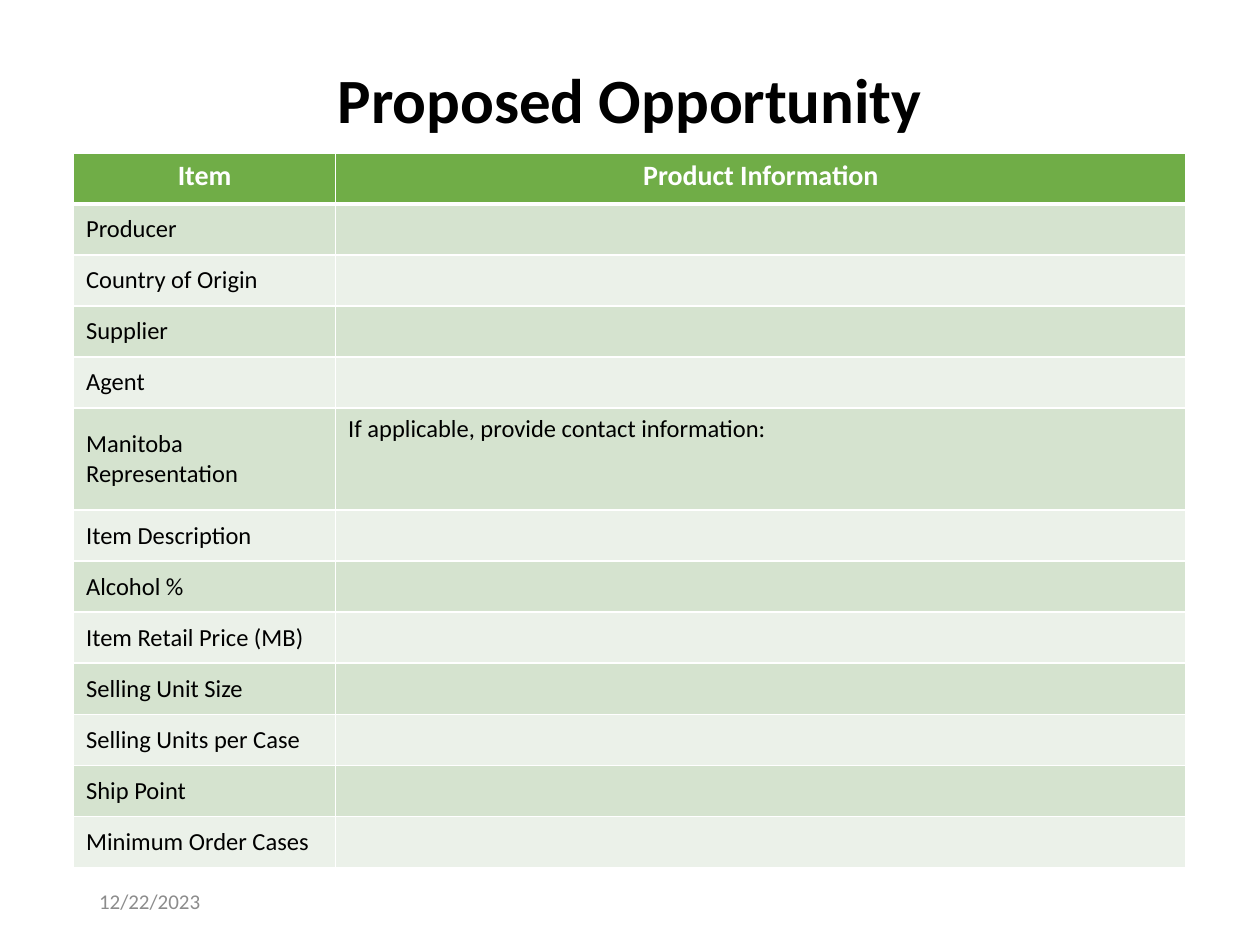
import pptx
import pptx.dml.color
import pptx.enum.text
import pptx.oxml
import pptx.oxml.ns
import pptx.util

Pt = pptx.util.Pt
RGBColor = pptx.dml.color.RGBColor
ALIGN = pptx.enum.text.PP_ALIGN
ANCHOR = pptx.enum.text.MSO_ANCHOR

FONT = "Calibri"
BLACK = RGBColor(0x00, 0x00, 0x00)
WHITE = RGBColor(0xFF, 0xFF, 0xFF)
GRAY = RGBColor(0x8C, 0x8C, 0x8C)
GREEN = RGBColor(0x70, 0xAD, 0x47)
BANDS = (RGBColor(0xD5, 0xE3, 0xCF), RGBColor(0xEB, 0xF1, 0xE9))

ROW_HEIGHT = 29.17
HEADINGS = ("Item", "Product Information")
REPRESENTATION = "Manitoba Representation"
CONTACT_HINT = "If applicable, provide contact information:"
ITEMS = (
    "Producer", "Country of Origin", "Supplier", "Agent", REPRESENTATION,
    "Item Description", "Alcohol %", "Item Retail Price (MB)",
    "Selling Unit Size", "Selling Units per Case", "Ship Point",
    "Minimum Order Cases",
)


class SlideBuilder:
    """Holds the slide and draws each kind of element in one style."""

    def __init__(self, slide):
        self.slide = slide

    def add_text(self, frame, text, size, color, bold=False, align=ALIGN.LEFT):
        paragraph = frame.paragraphs[0]
        paragraph.alignment = align
        run = paragraph.add_run()
        run.text = text
        run.font.name = FONT
        run.font.size = Pt(size)
        run.font.bold = bold
        run.font.color.rgb = color
        return paragraph

    def title(self, text, left, top, width, height):
        heading = self.slide.shapes.title
        heading.left, heading.top = Pt(left), Pt(top)
        heading.width, heading.height = Pt(width), Pt(height)
        heading.text_frame.vertical_anchor = ANCHOR.MIDDLE
        paragraph = self.add_text(heading.text_frame, text, 36, BLACK, True, ALIGN.CENTER)
        paragraph.line_spacing = 0.9

    def label(self, text, left, top, width, height):
        box = self.slide.shapes.add_textbox(Pt(left), Pt(top), Pt(width), Pt(height))
        box.text_frame.word_wrap = True
        box.text_frame.vertical_anchor = ANCHOR.MIDDLE
        self.add_text(box.text_frame, text, 12, GRAY)

    def table(self, left, top, widths, heights):
        frame = self.slide.shapes.add_table(
            len(heights), len(widths), Pt(left), Pt(top),
            Pt(sum(widths)), Pt(sum(heights)))
        grid = frame.table
        for column, width in zip(grid.columns, widths):
            column.width = Pt(width)
        for row, height in zip(grid.rows, heights):
            row.height = Pt(height)
        return grid

    def cell(self, cell, fill, top_border=1, bottom_border=1):
        properties = cell._tc.get_or_add_tcPr()
        borders = {"lnL": 1, "lnR": 1, "lnT": top_border, "lnB": bottom_border}
        for side, weight in borders.items():
            properties.append(pptx.oxml.parse_xml(
                f'<a:{side} {pptx.oxml.ns.nsdecls("a")} w="{Pt(weight)}">'
                f'<a:solidFill><a:srgbClr val="{WHITE}"/></a:solidFill></a:{side}>'))
        cell.fill.solid()
        cell.fill.fore_color.rgb = fill


def main():
    deck = pptx.Presentation()
    deck.slide_width, deck.slide_height = Pt(720), Pt(540)
    builder = SlideBuilder(deck.slides.add_slide(deck.slide_layouts[5]))

    # Title and date
    builder.title("Proposed Opportunity", 49.5, 28.8, 621, 60.5)
    builder.label("12/22/2023", 49.5, 500.5, 162, 28.8)

    # Product table: the representation row is twice as high
    heights = [ROW_HEIGHT] + [
        ROW_HEIGHT * (2 if item == REPRESENTATION else 1) for item in ITEMS]
    products = builder.table(42, 87.3, (149.8, 486), heights)

    # Header row
    for column, heading in enumerate(HEADINGS):
        cell = products.cell(0, column)
        builder.cell(cell, GREEN, bottom_border=3)
        builder.add_text(cell.text_frame, heading, 16, WHITE, True, ALIGN.CENTER)

    # Item rows
    for row, item in enumerate(ITEMS, start=1):
        name, information = products.cell(row, 0), products.cell(row, 1)
        for cell in (name, information):
            builder.cell(cell, BANDS[(row - 1) % 2], top_border=3 if row == 1 else 1)
        name.vertical_anchor = ANCHOR.MIDDLE
        builder.add_text(name.text_frame, item, 14, BLACK)
        if item == REPRESENTATION:
            builder.add_text(information.text_frame, CONTACT_HINT, 14, BLACK)

    deck.save("out.pptx")


if __name__ == "__main__":
    main()
